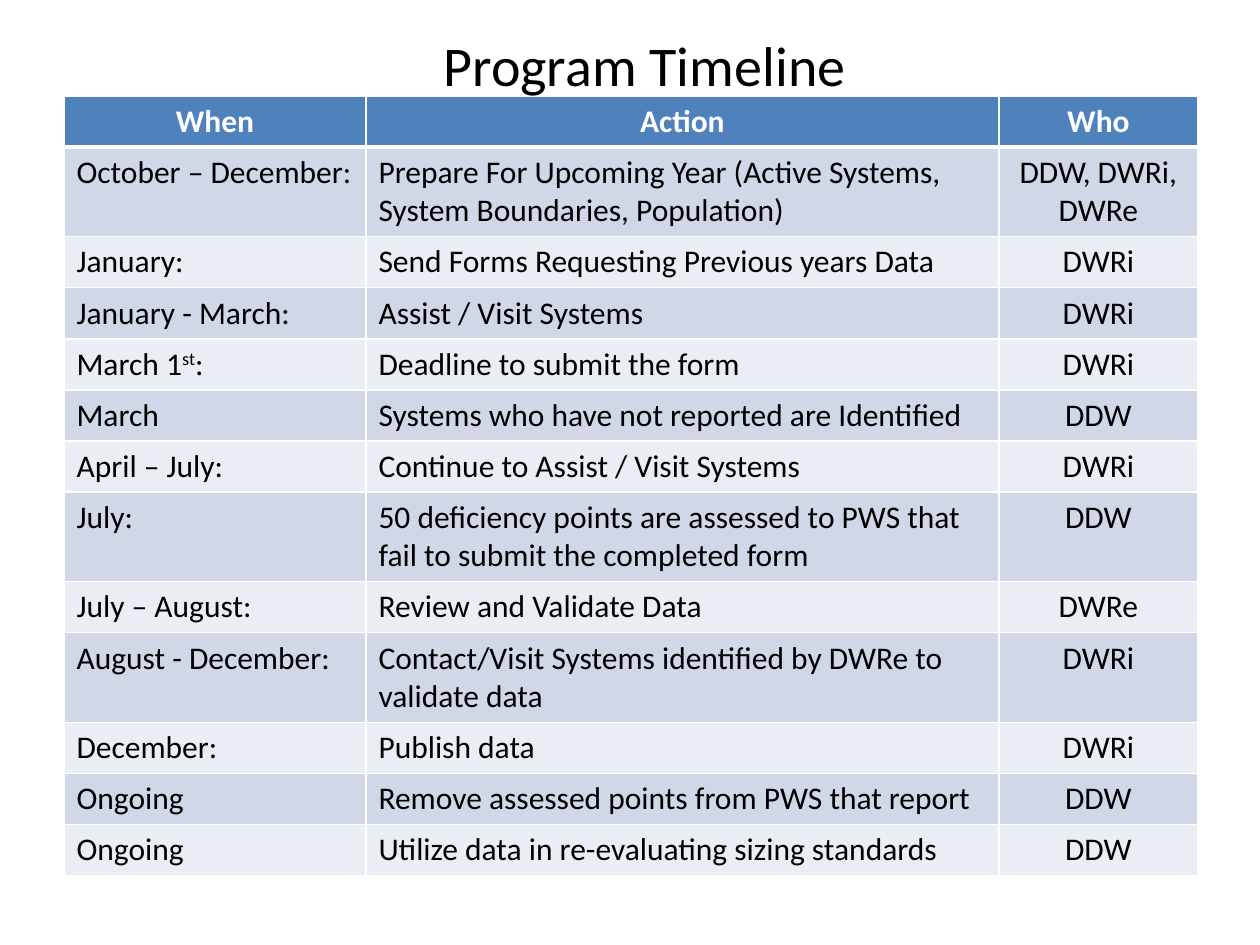
from lxml import etree
from pptx import Presentation
from pptx import util as u
from pptx.dml.color import RGBColor
from pptx.enum import text
from pptx.oxml import ns

PX_PER_INCH = 126
FONT = "Calibri"
BLACK = RGBColor(0x00, 0x00, 0x00)
WHITE = RGBColor(0xFF, 0xFF, 0xFF)
HEADER_BLUE = RGBColor(0x4F, 0x81, 0xBD)
BANDS = (RGBColor(0xD0, 0xD8, 0xE8), RGBColor(0xE9, 0xED, 0xF4))

COLUMN_WIDTHS = (302, 633, 199)
ROW_HEIGHT = 51
HEADINGS = ("When", "Action", "Who")
# A caret pair marks superscript.
TIMELINE = (
    ("October – December:", "Prepare For Upcoming Year (Active Systems, "
     "System Boundaries, Population)", "DDW, DWRi, DWRe"),
    ("January:", "Send Forms Requesting Previous years Data", "DWRi"),
    ("January - March:", "Assist / Visit Systems", "DWRi"),
    ("March 1^st^:", "Deadline to submit the form", "DWRi"),
    ("March", "Systems who have not reported are Identified", "DDW"),
    ("April – July:", "Continue to Assist / Visit Systems", "DWRi"),
    ("July:", "50 deficiency points are assessed to PWS that fail to submit "
     "the completed form", "DDW"),
    ("July – August:", "Review and Validate Data", "DWRe"),
    ("August - December:", "Contact/Visit Systems identified by DWRe to "
     "validate data", "DWRi"),
    ("December:", "Publish data", "DWRi"),
    ("Ongoing", "Remove assessed points from PWS that report", "DDW"),
    ("Ongoing", "Utilize data in re-evaluating sizing standards", "DDW"),
)


def px(count):
    return u.Emu(round(count * u.Inches(1) / PX_PER_INCH))


def format_paragraph(para, size, color, bold, align):
    para.alignment = align
    para.font.name = FONT
    para.font.size = u.Pt(size)
    para.font.color.rgb = color
    para.font.bold = bold


def set_borders(cell, top, bottom):
    """Draw white cell borders; top and bottom are widths in points."""
    properties = cell._tc.get_or_add_tcPr()
    widths = (("lnL", 1), ("lnR", 1), ("lnT", top), ("lnB", bottom))
    for side, width in widths:
        line = etree.SubElement(properties, ns.qn(f"a:{side}"), w=str(u.Pt(width)))
        fill = etree.SubElement(line, ns.qn("a:solidFill"))
        etree.SubElement(fill, ns.qn("a:srgbClr"), val=str(WHITE))


def fill_cell(cell, words, row, column):
    is_header = row == 0
    set_borders(cell, top=3 if row == 1 else 1, bottom=3 if is_header else 1)
    cell.fill.solid()
    cell.fill.fore_color.rgb = HEADER_BLUE if is_header else BANDS[(row - 1) % 2]

    para = cell.text_frame.paragraphs[0]
    for index, part in enumerate(words.split("^")):
        span = para.add_run()
        span.text = part
        if index % 2:
            span._r.get_or_add_rPr().set("baseline", "30000")
    centred = is_header or column == 2
    align = text.PP_ALIGN.CENTER if centred else text.PP_ALIGN.LEFT
    format_paragraph(para, 18, WHITE if is_header else BLACK, is_header, align)


def add_timeline(page):
    rows = (HEADINGS, *TIMELINE)
    table = page.shapes.add_table(
        len(rows), len(HEADINGS), px(64), px(96),
        px(sum(COLUMN_WIDTHS)), px(ROW_HEIGHT * len(rows))).table
    for column, width in zip(table.columns, COLUMN_WIDTHS):
        column.width = px(width)
    for row, entries in enumerate(rows):
        table.rows[row].height = px(ROW_HEIGHT)
        for column, words in enumerate(entries):
            fill_cell(table.cell(row, column), words, row, column)


def set_title(page, words):
    """Fill the title and bring it in front of the table."""
    title = page.shapes.title
    title.left, title.top, title.width, title.height = map(px, (431, 24, 432, 81))
    frame = title.text_frame
    frame.text = words
    frame.word_wrap = False
    frame.auto_size = text.MSO_AUTO_SIZE.SHAPE_TO_FIT_TEXT
    frame.vertical_anchor = text.MSO_ANCHOR.TOP
    format_paragraph(frame.paragraphs[0], 32, BLACK, False, text.PP_ALIGN.LEFT)
    title.element.getparent().append(title.element)


def main():
    deck = Presentation()
    deck.slide_width, deck.slide_height = px(1260), px(945)
    page = deck.slides.add_slide(deck.slide_layouts.get_by_name("Title Only"))
    add_timeline(page)
    set_title(page, "Program Timeline")
    deck.save("out.pptx")


if __name__ == "__main__":
    main()
